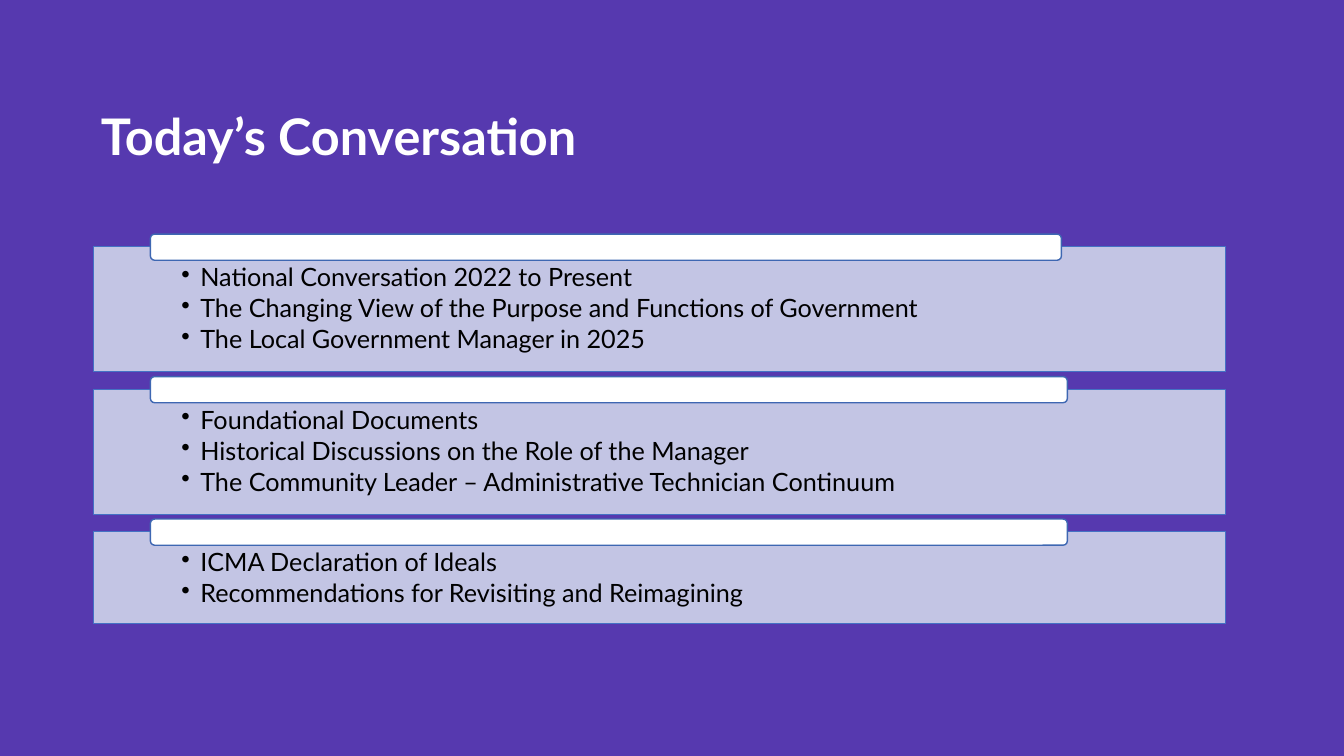
from lxml import etree
from pptx import Presentation
from pptx.dml.color import RGBColor
from pptx.enum.shapes import MSO_SHAPE
from pptx.enum.text import MSO_ANCHOR, PP_ALIGN
from pptx.oxml.ns import qn
from pptx.util import Cm, Pt

RECTANGLE = MSO_SHAPE.RECTANGLE
ROUNDED = MSO_SHAPE.ROUNDED_RECTANGLE
TOP = MSO_ANCHOR.TOP
LEFT = PP_ALIGN.LEFT

PURPLE = RGBColor(0x56, 0x39, 0xAF)
LAVENDER = RGBColor(0xCF, 0xD5, 0xEA)
BLUE = RGBColor(0x44, 0x72, 0xC4)
DARK_BLUE = RGBColor(0x3E, 0x67, 0xB2)
WHITE = RGBColor(0xFF, 0xFF, 0xFF)
BLACK = RGBColor(0, 0, 0)
FONT = "Lato"

TITLE = "Today’s Conversation"
# Topics, panel height and tab width in cm
SECTIONS = [
    (["National Conversation 2022 to Present",
      "The Changing View of the Purpose and Functions of Government",
      "The Local Government Manager in 2025"], 3.15, 22.96),
    (["Foundational Documents",
      "Historical Discussions on the Role of the Manager",
      "The Community Leader – Administrative Technician Continuum"], 3.15, 23.11),
    (["ICMA Declaration of Ideals",
      "Recommendations for Revisiting and Reimagining"], 2.31, 23.11),
]

PANEL_LEFT, PANEL_TOP, PANEL_WIDTH, PANEL_GAP = 2.36, 6.22, 28.52, 0.44
TAB_LEFT, TAB_HEIGHT, TAB_RISE = 3.79, 0.66, 0.32
BULLET_INDENT = Cm(0.48)


def write(frame, lines, size, color, bold=False, spacing=1.0, after=0,
          bullet=False, margins=(0, 0, 0, 0)):
    """Fill a text frame; margins are left, top, right, bottom in cm."""
    frame.word_wrap = True
    frame.vertical_anchor = TOP
    (frame.margin_left, frame.margin_top,
     frame.margin_right, frame.margin_bottom) = map(Cm, margins)
    for index, line in enumerate(lines):
        paragraph = frame.add_paragraph() if index else frame.paragraphs[0]
        paragraph.alignment = LEFT
        paragraph.line_spacing = spacing
        paragraph.space_after = Pt(after)
        if bullet:
            properties = paragraph._p.get_or_add_pPr()
            properties.set("marL", str(BULLET_INDENT))
            properties.set("indent", str(-BULLET_INDENT))
            etree.SubElement(properties, qn("a:buChar")).set("char", "•")
        run = paragraph.add_run()
        run.text = line
        run.font.name = FONT
        run.font.size = Pt(size)
        run.font.bold = bold
        run.font.color.rgb = color


def add_box(slide, kind, box, fill, line, opacity=100):
    shape = slide.shapes.add_shape(kind, *map(Cm, box))
    shape.shadow.inherit = False
    shape.fill.solid()
    shape.fill.fore_color.rgb = fill
    if opacity < 100:
        color = shape._element.spPr.find(qn("a:solidFill"))[0]
        etree.SubElement(color, qn("a:alpha")).set("val", str(opacity * 1000))
    shape.line.color.rgb = line
    shape.line.width = Pt(1)
    return shape


def main():
    deck = Presentation()
    deck.slide_width, deck.slide_height = Cm(33.87), Cm(19.05)
    slide = deck.slides.add_slide(deck.slide_layouts[6])
    slide.background.fill.solid()
    slide.background.fill.fore_color.rgb = PURPLE

    title = slide.shapes.add_textbox(Cm(2.54), Cm(2.5), Cm(28.32), Cm(3.3))
    write(title.text_frame, [TITLE], 36, WHITE, bold=True, spacing=1.1)

    top = PANEL_TOP
    for topics, height, tab_width in SECTIONS:
        panel = add_box(slide, RECTANGLE, (PANEL_LEFT, top, PANEL_WIDTH, height),
                        LAVENDER, BLUE, opacity=90)
        write(panel.text_frame, topics, 18, BLACK, spacing=0.9, after=2.7,
              bullet=True, margins=(2.21, 0.46, 2.21, 0.36))
        add_box(slide, ROUNDED, (TAB_LEFT, top - TAB_RISE, tab_width, TAB_HEIGHT),
                WHITE, DARK_BLUE)
        top += height + PANEL_GAP

    deck.save("out.pptx")


if __name__ == "__main__":
    main()
